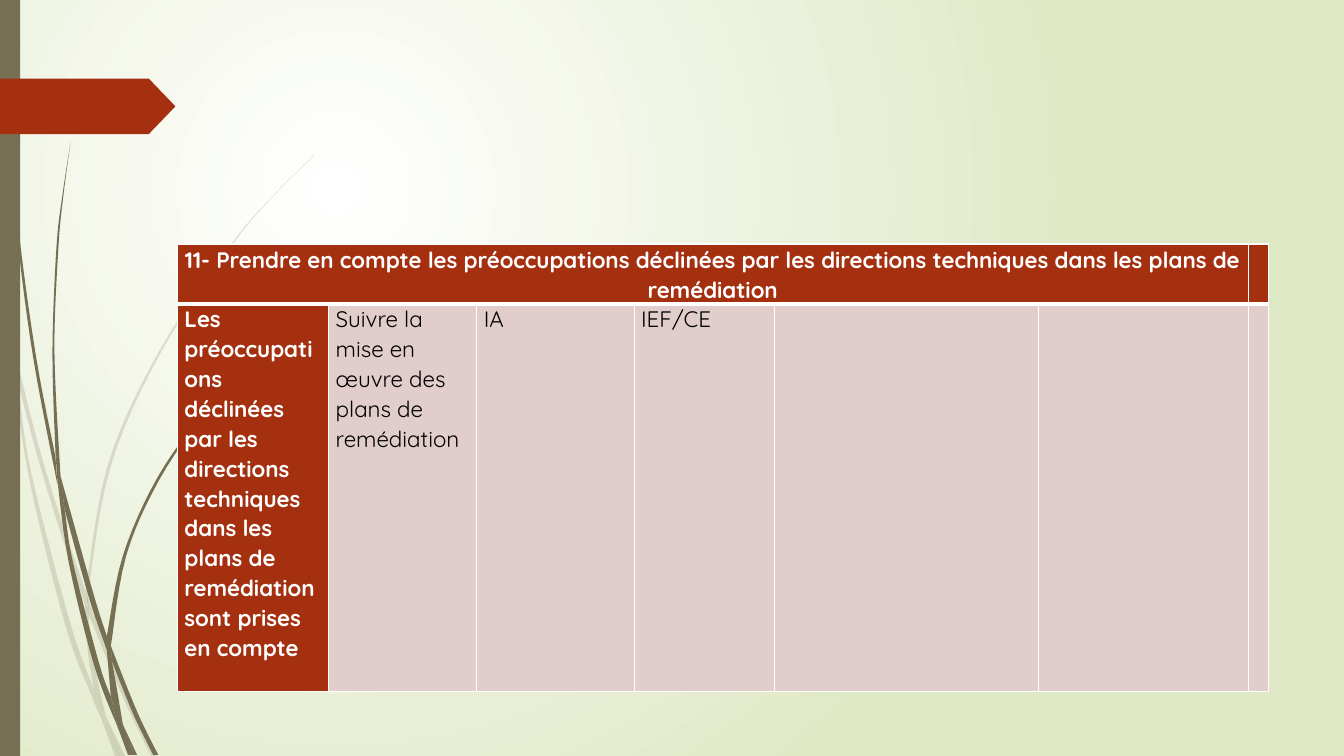
from lxml.etree import SubElement
from pptx import Presentation
from pptx.dml.color import RGBColor
from pptx.enum.shapes import MSO_SHAPE
from pptx.enum.text import PP_ALIGN
from pptx.oxml.ns import qn
from pptx.util import Inches, Pt

# Grid of 1333 columns by 750 rows
COLS, ROWS = 1333, 750
UNIT = Inches(0.01)

WHITE = RGBColor(0xFF, 0xFF, 0xFF)
BLACK = RGBColor(0, 0, 0)
LIME = RGBColor(0xDF, 0xE8, 0xC4)
OLIVE = RGBColor(0x76, 0x6F, 0x54)
RUST = RGBColor(0xA5, 0x30, 0x10)
ROSE = RGBColor(0xE1, 0xCD, 0xCC)
FONT = "Quicksand"

# Grass blades: each has an outer and an inner edge, in grid units
PALE = [
    ([(0, 282), (9, 322), (11, 350)], [(10, 344), (0, 299)]),
    ([(14, 345), (36, 434), (62, 520), (85, 586)],
     [(84, 599), (58, 522), (36, 449), (17, 376)]),
    ([(88, 596), (127, 692), (155, 750)], [(150, 750), (123, 694), (88, 610)]),
    ([(105, 711), (124, 750)], [(119, 750)]),
    ([(11, 350), (17, 376), (31, 469), (70, 619), (93, 683)],
     [(101, 714), (92, 693), (65, 621), (28, 470), (11, 350)]),
    ([(84, 599), (88, 610), (91, 646), (105, 711)],
     [(93, 683), (87, 646), (84, 599)]),
    ([(312, 153), (268, 197), (228, 244), (158, 348), (107, 461), (85, 586)],
     [(88, 596), (88, 584), (110, 462), (160, 349), (229, 245), (268, 198),
      (312, 154)]),
    ([(101, 714), (119, 750)], [(114, 750)]),
    ([(85, 586), (88, 596), (88, 610)], [(84, 599)]),
    ([(93, 683), (105, 711), (119, 750)], [(101, 714)]),
]
DARK = [
    ([(3, 0), (4, 48), (7, 110), (17, 233), (33, 355), (57, 481)],
     [(55, 453), (36, 355), (19, 232), (8, 109), (5, 48), (4, 0)]),
    ([(60, 472), (93, 590), (106, 631)], [(106, 645), (88, 592), (64, 505)]),
    ([(110, 641), (136, 706), (157, 749)], [(152, 749), (132, 708), (111, 656)]),
    ([(57, 477), (64, 505), (72, 556), (98, 657), (110, 691)],
     [(117, 722), (93, 659), (68, 557), (57, 477)]),
    ([(70, 141), (62, 193), (56, 245), (52, 349), (55, 449)],
     [(60, 472), (54, 349), (58, 245), (63, 193), (70, 141)]),
    ([(122, 719), (136, 749)], [(133, 749)]),
    ([(55, 449), (60, 472), (64, 505)], [(57, 477)]),
    ([(260, 344), (231, 373), (204, 405), (156, 474), (122, 551), (106, 631)],
     [(110, 641), (125, 552), (158, 476), (205, 406), (231, 374), (261, 344)]),
    ([(117, 722), (131, 749)], [(127, 749)]),
    ([(106, 645), (111, 656), (122, 719)], [(110, 691)]),
    ([(106, 631), (110, 641), (111, 656)], [(106, 645)]),
    ([(110, 691), (122, 719), (133, 749)], [(130, 749), (117, 722)]),
]

# Table
WIDTHS = [150, 147, 156, 139, 262, 208, 20]
HEIGHTS = [59, 385]
TITLE = ("11- Prendre en compte les préoccupations déclinées par les "
         "directions techniques dans les plans de remédiation")
BODY = [
    "Les préoccupations déclinées par les directions techniques dans les "
    "plans de remédiation sont prises en compte",
    "Suivre la mise en œuvre des plans de remédiation",
    "IA",
    "IEF/CE",
]


def grid(*nums):
    return [round(n * UNIT) for n in nums]


def paint(shape, color):
    shape.fill.solid()
    shape.fill.fore_color.rgb = color
    shape.line.fill.background()
    shape.shadow.inherit = False


def smooth(edge, steps=6):
    """Points of a spline through the anchors of an edge."""
    pts = [edge[0], *edge, edge[-1]]
    out = [edge[0]]
    for a, b, c, d in zip(pts, pts[1:], pts[2:], pts[3:]):
        for i in range(1, steps + 1):
            t = i / steps
            out.append(tuple(
                q + t * (r - p) / 2
                + t * t * (2 * p - 5 * q + 4 * r - s) / 2
                + t ** 3 * (3 * q - p - 3 * r + s) / 2
                for p, q, r, s in zip(a, b, c, d)))
    return out


def grass(slide, blades, alpha=None):
    group = slide.shapes.add_group_shape()
    for outer, inner in blades:
        pts = [grid(*p) for p in smooth(outer) + smooth(inner)]
        pen = group.shapes.build_freeform(*pts[0])
        pen.add_line_segments(pts[1:], close=True)
        blade = pen.convert_to_shape()
        paint(blade, OLIVE)
        if alpha:
            tint = next(blade.element.iter(qn("a:srgbClr")))
            SubElement(tint, qn("a:alpha"), val=str(alpha * 1000))


def block(slide, kind, box, color):
    shape = slide.shapes.add_shape(kind, *grid(*box))
    paint(shape, color)
    return shape


def glow(slide):
    fill = slide.background.fill
    fill.gradient()
    for stop, color, pos in zip(fill.gradient_stops, (WHITE, LIME), (0, 1)):
        stop.color.rgb = color
        stop.position = pos
    grad = next(slide.element.iter(qn("a:gradFill")))
    grad.remove(grad.find(qn("a:lin")))
    ring = SubElement(grad, qn("a:path"), path="circle")
    SubElement(ring, qn("a:fillToRect"),
               l="50000", t="50000", r="100000", b="100000")


def border(cell, sizes):
    props = cell._tc.get_or_add_tcPr()
    for i, (side, size) in enumerate(zip("LRTB", sizes)):
        line = SubElement(props, qn("a:ln" + side), w=str(Pt(size)))
        fill = SubElement(line, qn("a:solidFill"))
        SubElement(fill, qn("a:srgbClr"), val=str(WHITE))
        props.insert(i, line)


def write(cell, text, color, bold, align):
    para = cell.text_frame.paragraphs[0]
    para.alignment = align
    para.line_spacing = 1.07
    run = para.add_run()
    run.text = text
    run.font.name = FONT
    run.font.size = Pt(16)
    run.font.bold = bold
    run.font.color.rgb = color


def table(slide):
    box = grid(176, 242, sum(WIDTHS), sum(HEIGHTS))
    tab = slide.shapes.add_table(len(HEIGHTS), len(WIDTHS), *box).table
    for col, width in zip(tab.columns, grid(*WIDTHS)):
        col.width = width
    for row, height in zip(tab.rows, grid(*HEIGHTS)):
        row.height = height
    for r in range(len(HEIGHTS)):
        for c in range(len(WIDTHS)):
            cell = tab.cell(r, c)
            cell.margin_left = cell.margin_right = Inches(0.07)
            cell.margin_top = cell.margin_bottom = 0
            cell.fill.solid()
            cell.fill.fore_color.rgb = RUST if r == 0 or c == 0 else ROSE
            border(cell, (1, 1, 1, 3) if r == 0 else (1, 1, 3, 1))
    tab.cell(0, 0).merge(tab.cell(0, 5))
    write(tab.cell(0, 0), TITLE, WHITE, True, PP_ALIGN.CENTER)
    for c, text in enumerate(BODY):
        first = c == 0
        write(tab.cell(1, c), text, WHITE if first else BLACK, first,
              PP_ALIGN.LEFT)


def main():
    deck = Presentation()
    deck.slide_width, deck.slide_height = grid(COLS, ROWS)
    slide = deck.slides.add_slide(deck.slide_layouts[6])
    # Backdrop
    glow(slide)
    grass(slide, PALE, alpha=20)
    grass(slide, DARK)
    # Side bar and arrow tab
    block(slide, MSO_SHAPE.RECTANGLE, (0, 0, 20, ROWS), OLIVE)
    tab = block(slide, MSO_SHAPE.PENTAGON, (0, 78, 174, 55), RUST)
    tab.adjustments[0] = 0.48
    # Content
    table(slide)
    deck.save("out.pptx")


if __name__ == "__main__":
    main()
